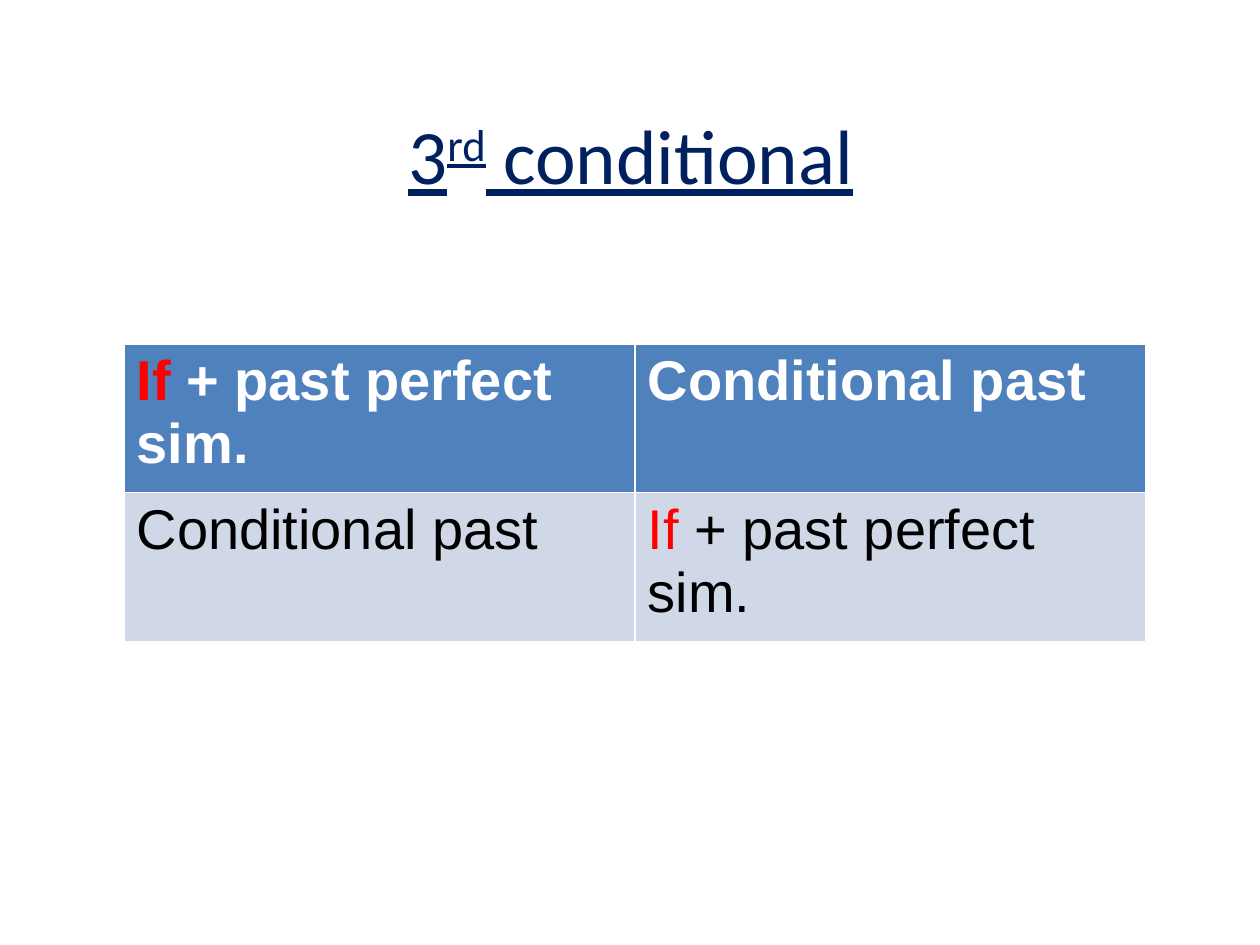
from pptx import Presentation
from pptx.dml.color import RGBColor
from pptx.enum.text import MSO_ANCHOR, PP_ALIGN
from pptx.util import Pt

NAVY, RED, WHITE, BLACK = "002060", "FF0000", "FFFFFF", "000000"

# (text, baseline shift in thousandths of a percent)
TITLE = [("3", 0), ("rd", 30000), (" conditional", 0)]
TITLE_BOX = (36.5, 43, 648, 90)

IF_CLAUSE = ("If ", "+ past perfect sim.")
MAIN_CLAUSE = ("", "Conditional past")
# (fill, text colour, bold, cells)
ROWS = [
    ("4F81BD", WHITE, True, [IF_CLAUSE, MAIN_CLAUSE]),
    ("D0D8E8", BLACK, False, [MAIN_CLAUSE, IF_CLAUSE]),
]
TABLE_BOX = (70.87, 196.5, 584, 170)


def rgb(color):
    return RGBColor.from_string(color)


def points(box):
    return [Pt(value) for value in box]


def add_run(paragraph, text, color):
    run = paragraph.add_run()
    run.text = text
    run.font.color.rgb = rgb(color)
    return run


def add_title(slide):
    frame = slide.shapes.add_textbox(*points(TITLE_BOX)).text_frame
    frame.word_wrap = True
    frame.vertical_anchor = MSO_ANCHOR.MIDDLE
    paragraph = frame.paragraphs[0]
    paragraph.alignment = PP_ALIGN.CENTER
    paragraph.font.size = Pt(44)
    paragraph.font.name = "Calibri"
    for text, baseline in TITLE:
        run = add_run(paragraph, text, NAVY)
        run.font.underline = True
        if baseline:
            run.font._element.set("baseline", str(baseline))


def add_clause_table(slide):
    """Add the table; its default style draws the white cell borders."""
    table = slide.shapes.add_table(len(ROWS), 2, *points(TABLE_BOX)).table
    for row, (fill, color, bold, clauses) in zip(table.rows, ROWS):
        for cell, (keyword, rest) in zip(row.cells, clauses):
            cell.fill.solid()
            cell.fill.fore_color.rgb = rgb(fill)
            paragraph = cell.text_frame.paragraphs[0]
            paragraph.font.size = Pt(32)
            paragraph.font.name = "Arial"
            paragraph.font.bold = bold
            if keyword:
                add_run(paragraph, keyword, RED)
            add_run(paragraph, rest, color)


def main():
    presentation = Presentation()
    presentation.slide_width, presentation.slide_height = Pt(720), Pt(540)
    slide = presentation.slides.add_slide(presentation.slide_layouts[6])
    add_title(slide)
    add_clause_table(slide)
    presentation.save("out.pptx")


if __name__ == "__main__":
    main()
